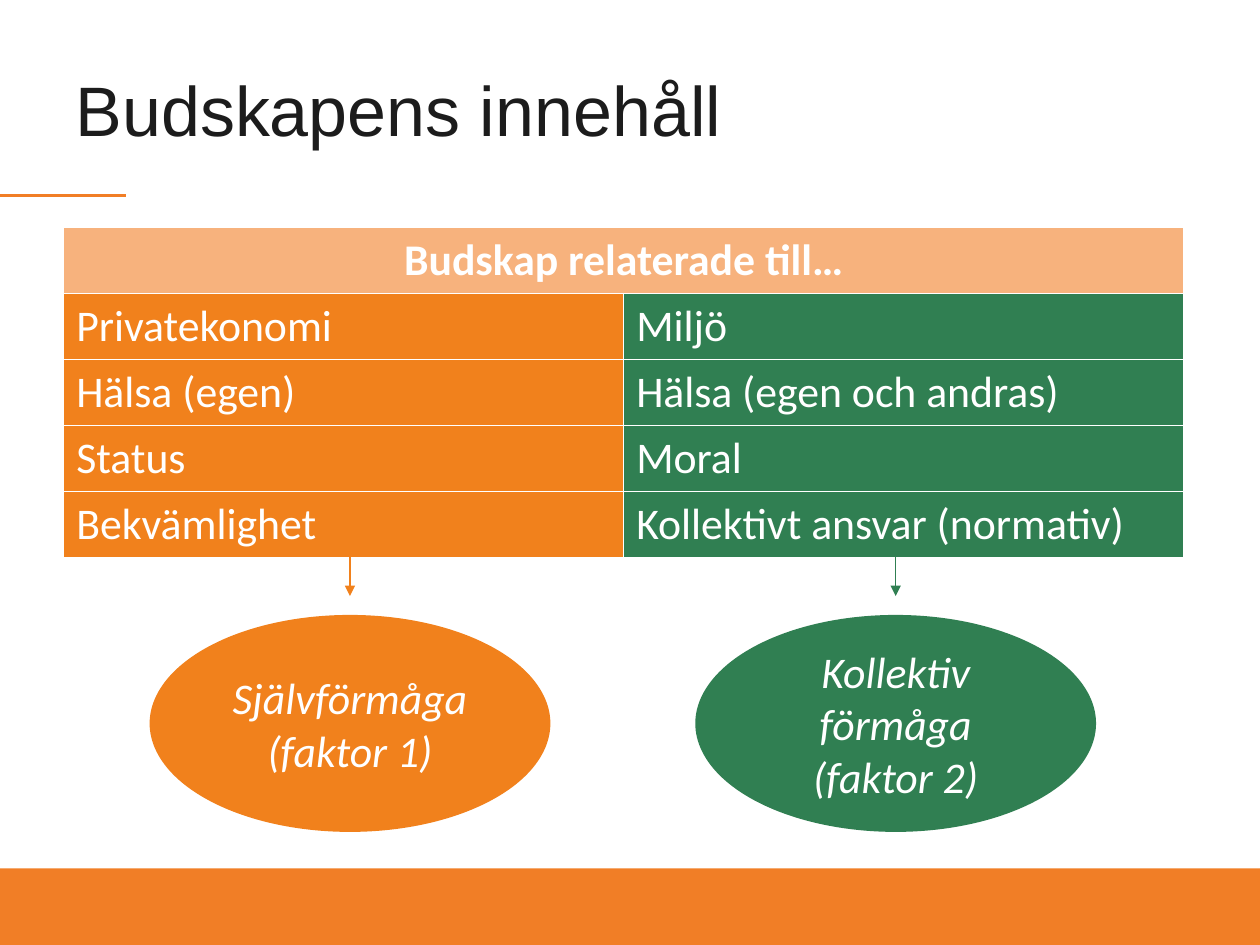
from lxml.etree import SubElement
from pptx import Presentation
from pptx.dml.color import RGBColor
from pptx.enum.shapes import MSO_CONNECTOR as CONNECTOR, MSO_SHAPE as SHAPE
from pptx.enum.text import MSO_ANCHOR as ANCHOR, MSO_AUTO_SIZE as AUTO_SIZE, PP_ALIGN as ALIGN
from pptx.oxml.ns import qn
from pptx.util import Pt

COLORS = {
    "band": "F17E26",
    "header": "F7B27D",
    "self": "F1811C",
    "collective": "307F52",
    "white": "FFFFFF",
    "title": "1C1C1C",
}


def add_text(paragraph, text, size=25, font="Calibri", color="white", bold=False, italic=False):
    run = paragraph.add_run()
    run.text = text
    run.font.size = Pt(size)
    run.font.name = font
    run.font.bold = bold
    run.font.italic = italic
    run.font.color.rgb = RGBColor.from_string(COLORS[color])


def add_line(slide, x1, y1, x2, y2, color, width):
    line = slide.shapes.add_connector(CONNECTOR.STRAIGHT, Pt(x1), Pt(y1), Pt(x2), Pt(y2))
    line.line.color.rgb = RGBColor.from_string(COLORS[color])
    line.line.width = Pt(width)
    SubElement(line._element.spPr, qn("a:effectLst"))
    return line


presentation = Presentation()
presentation.slide_width = Pt(720)
presentation.slide_height = Pt(540)
slide = presentation.slides.add_slide(presentation.slide_layouts[5])

band = slide.shapes.add_shape(SHAPE.RECTANGLE, Pt(0), Pt(496.3), Pt(720), Pt(43.7))
band.shadow.inherit = False
band.fill.solid()
band.fill.fore_color.rgb = RGBColor.from_string(COLORS["band"])
band.line.fill.background()
add_line(slide, 0, 111.6, 72, 111.6, "band", 1.5)

title = slide.shapes.title
title.left, title.top, title.width, title.height = Pt(36), Pt(21.6), Pt(648), Pt(90)
title.text_frame.auto_size = AUTO_SIZE.NONE
title.text_frame.vertical_anchor = ANCHOR.MIDDLE
paragraph = title.text_frame.paragraphs[0]
paragraph.alignment = ALIGN.LEFT
paragraph.line_spacing = 0.8
add_text(paragraph, "Budskapens innehåll", 40, "Arial", "title")

rows = [
    ("Budskap relaterade till…", ""),
    ("Privatekonomi", "Miljö"),
    ("Hälsa (egen)", "Hälsa (egen och andras)"),
    ("Status", "Moral"),
    ("Bekvämlighet", "Kollektivt ansvar (normativ)"),
]
row_height = 37.4
table = slide.shapes.add_table(
    len(rows), 2, Pt(36.4), Pt(130), Pt(640), Pt(row_height * len(rows))
).table
for column in table.columns:
    column.width = Pt(320)
for row_index, texts in enumerate(rows):
    table.rows[row_index].height = Pt(row_height)
    is_header = row_index == 0
    for text, color, cell in zip(texts, ("self", "collective"), table.rows[row_index].cells):
        properties = cell._tc.get_or_add_tcPr()
        for side in ("a:lnL", "a:lnR", "a:lnT", "a:lnB"):
            border = SubElement(properties, qn(side), w=str(Pt(1)))
            fill = SubElement(border, qn("a:solidFill"))
            SubElement(fill, qn("a:srgbClr"), val=COLORS["white"])
        cell.fill.solid()
        cell.fill.fore_color.rgb = RGBColor.from_string(COLORS["header" if is_header else color])
        if text:
            paragraph = cell.text_frame.paragraphs[0]
            paragraph.alignment = ALIGN.CENTER if is_header else ALIGN.LEFT
            add_text(paragraph, text, bold=is_header)
table.cell(0, 0).merge(table.cell(0, 1))

factors = [
    (200, "self", ("Självförmåga", "(faktor 1)")),
    (511.8, "collective", ("Kollektiv förmåga", "(faktor 2)")),
]
for center, color, texts in factors:
    arrow = add_line(slide, center, 316, center, 340.6, color, 0.75)
    SubElement(arrow.line._get_or_add_ln(), qn("a:tailEnd"), type="triangle")

    ellipse = slide.shapes.add_shape(
        SHAPE.OVAL, Pt(center - 114.5), Pt(351.4), Pt(229), Pt(124)
    )
    ellipse.shadow.inherit = False
    ellipse.fill.solid()
    ellipse.fill.fore_color.rgb = RGBColor.from_string(COLORS[color])
    ellipse.line.fill.background()
    frame = ellipse.text_frame
    frame.word_wrap = True
    frame.vertical_anchor = ANCHOR.MIDDLE
    for index, text in enumerate(texts):
        paragraph = frame.add_paragraph() if index else frame.paragraphs[0]
        paragraph.alignment = ALIGN.CENTER
        add_text(paragraph, text, italic=True)

presentation.save("out.pptx")
